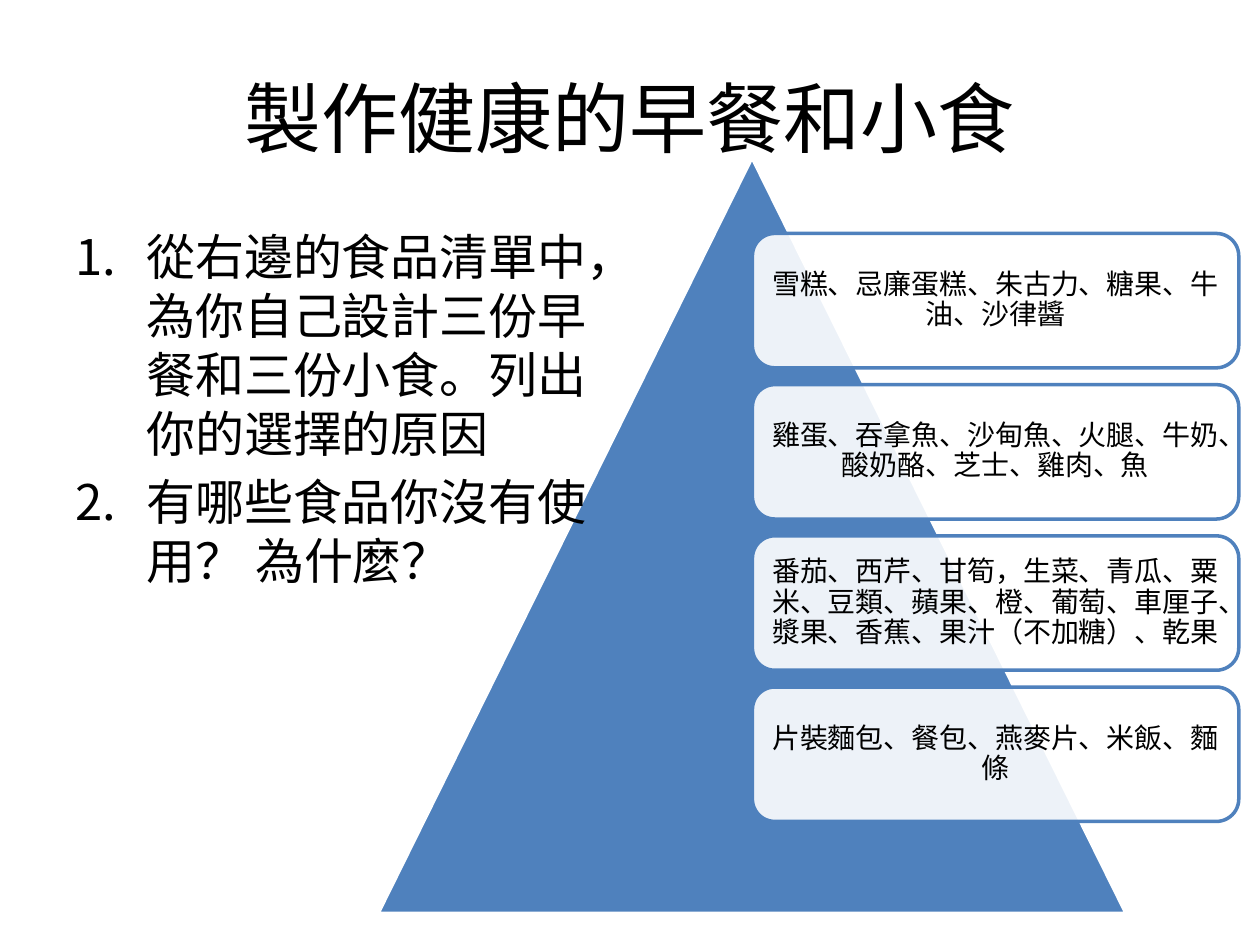
"""Build a slide on healthy breakfasts and snacks with a food pyramid."""
from lxml import etree
from pptx import Presentation
from pptx.dml.color import RGBColor
from pptx.enum.shapes import MSO_SHAPE as SHAPE
from pptx.enum.text import MSO_ANCHOR as ANCHOR, PP_ALIGN as ALIGN
from pptx.oxml.ns import qn
from pptx.util import Pt

COLORS = {"text": "000000", "blue": "4F81BD", "white": "FFFFFF"}
FOODS = [
    "雪糕、忌廉蛋糕、朱古力、糖果、牛油、沙律醬",
    "雞蛋、吞拿魚、沙甸魚、火腿、牛奶、酸奶酪、芝士、雞肉、魚",
    "番茄、西芹、甘筍，生菜、青瓜、粟米、豆類、蘋果、橙、葡萄、車厘子、漿果、香蕉、果汁（不加糖）、乾果",
    "片裝麵包、餐包、燕麥片、米飯、麵條",
]
TASKS = [
    "從右邊的食品清單中，為你自己設計三份早餐和三份小食。列出你的選擇的原因",
    "有哪些食品你沒有使用？ 為什麼？",
]


def add_run(p, text, size):
    r = p.add_run()
    r.text = text
    r.font.name = "Calibri"
    r.font.size = Pt(size)
    r.font.color.rgb = RGBColor.from_string(COLORS["text"])


def add_shape(kind, left, top, width, height, fill, line):
    sp = s.shapes.add_shape(kind, Pt(left), Pt(top), Pt(width), Pt(height))
    sp.shadow.inherit = False
    sp.fill.solid()
    sp.fill.fore_color.rgb = RGBColor.from_string(COLORS[fill])
    sp.line.color.rgb = RGBColor.from_string(COLORS[line])
    sp.line.width = Pt(2)
    return sp


prs = Presentation()
prs.slide_width, prs.slide_height = Pt(720), Pt(540)
s = prs.slides.add_slide(prs.slide_layouts[5])

title = s.shapes.title
title.left, title.top, title.width, title.height = Pt(36), Pt(21.6), Pt(648), Pt(90)
title.text_frame.vertical_anchor = ANCHOR.MIDDLE
p = title.text_frame.paragraphs[0]
p.alignment = ALIGN.CENTER
add_run(p, "製作健康的早餐和小食", 44)

add_shape(SHAPE.ISOSCELES_TRIANGLE, 216, 90, 427.5, 432, "blue", "white")

for i, food in enumerate(FOODS):
    sp = add_shape(SHAPE.ROUNDED_RECTANGLE, 430, 133.4 + 86.4 * i, 277.9, 76.8, "white", "blue")
    color = sp.fill._xPr.find(qn("a:solidFill"))[0]
    etree.SubElement(color, qn("a:alpha"), val="90000")
    tf = sp.text_frame
    tf.word_wrap = True
    tf.vertical_anchor = ANCHOR.MIDDLE
    tf.margin_left = tf.margin_right = tf.margin_top = tf.margin_bottom = Pt(4.8)
    p = tf.paragraphs[0]
    p.alignment = ALIGN.CENTER
    p.line_spacing = 0.9
    p.space_after = Pt(5.6)
    add_run(p, food, 16)

tasks = s.shapes.add_textbox(Pt(36), Pt(126), Pt(318), Pt(356.4))
tf = tasks.text_frame
tf.word_wrap = True
for i, task in enumerate(TASKS):
    p = tf.add_paragraph() if i else tf.paragraphs[0]
    p.space_before = Pt(5.6)
    pPr = p._p.get_or_add_pPr()
    pPr.set("marL", str(Pt(40.5)))
    pPr.set("indent", str(-Pt(40.5)))
    etree.SubElement(pPr, qn("a:buFont"), typeface="+mj-lt")
    etree.SubElement(pPr, qn("a:buAutoNum"), type="arabicPeriod")
    add_run(p, task, 28)

prs.save("out.pptx")
